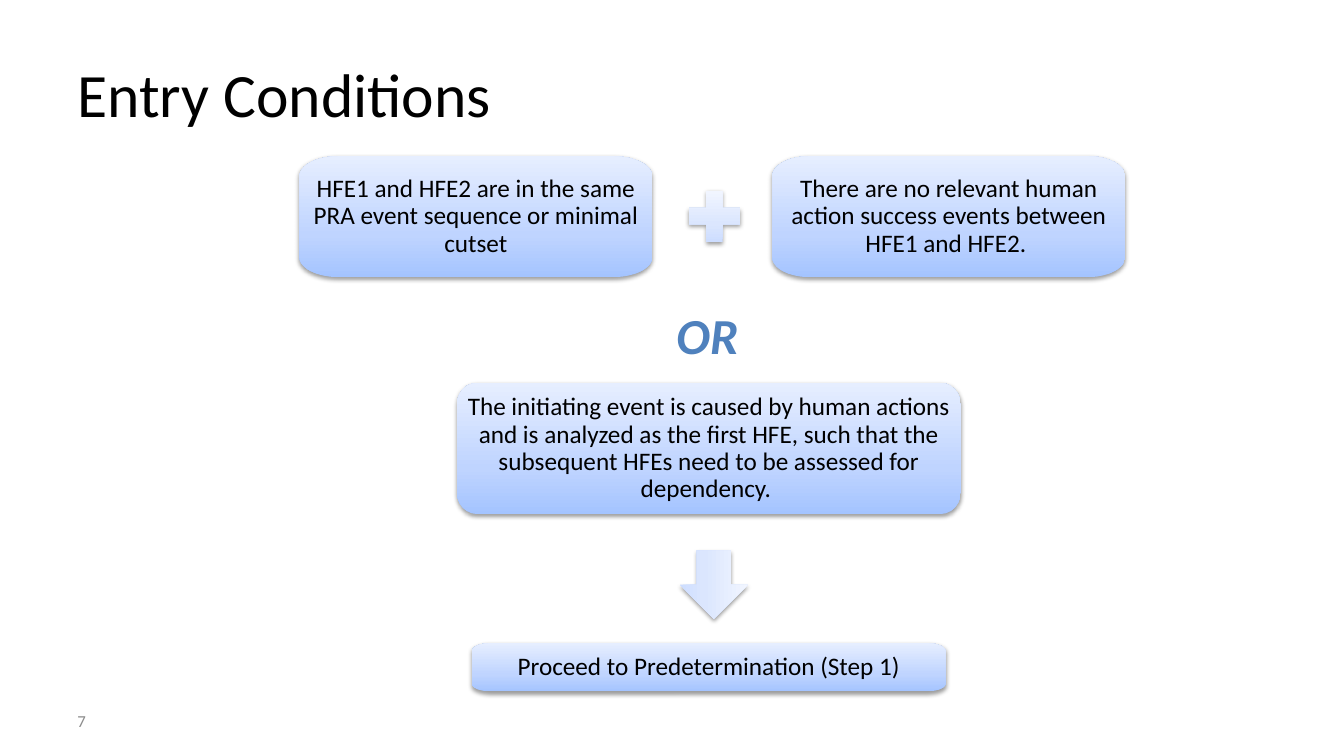
import copy

import pptx
import pptx.dml.color
import pptx.enum.shapes
import pptx.enum.text
import pptx.util
from lxml import etree

Inches, Pt = pptx.util.Inches, pptx.util.Pt
RGBColor = pptx.dml.color.RGBColor
MSO_SHAPE = pptx.enum.shapes.MSO_SHAPE
PP_ALIGN, MSO_ANCHOR = pptx.enum.text.PP_ALIGN, pptx.enum.text.MSO_ANCHOR
qn = pptx.oxml.ns.qn

# Content: text, (left, top, width, height), corner radii (x, y), inset
CONDITIONS = [
    ("HFE1 and HFE2 are in the same PRA event sequence or minimal cutset",
     (2.97, 1.55, 3.5, 1.2), (0.39, 0.2), 0.1),
    ("There are no relevant human action success events between HFE1 and HFE2. ",
     (7.66, 1.55, 3.5, 1.2), (0.37, 0.2), 0.12),
    ("The initiating event is caused by human actions and is analyzed as the "
     "first HFE, such that the subsequent HFEs need to be assessed for dependency. ",
     (4.53, 3.8, 5, 1.3), (0.2, 0.22), 0.08),
    ("Proceed to Predetermination (Step 1)",
     (4.68, 6.38, 4.7, 0.48), (0.19, 0.08), 0.08),
]

# Symbols: preset, (left, top, width, height), adjustments, gradient angle
SYMBOLS = [
    (MSO_SHAPE.CROSS, (6.83, 1.89, 0.51, 0.51), [0.34], 90),
    (MSO_SHAPE.DOWN_ARROW, (6.74, 5.46, 0.68, 0.68), [0.5, 0.5], 0),
]

# Colours and font
FONT = "Calibri"
BLACK = RGBColor(0x00, 0x00, 0x00)
BLUE = RGBColor(0x4F, 0x81, 0xBD)
GREY = RGBColor(0x8C, 0x8C, 0x8C)
BOX_BLUES = [RGBColor(0xA4, 0xC4, 0xFF), RGBColor(0xBF, 0xD4, 0xFF), RGBColor(0xE6, 0xEE, 0xFF)]
SYMBOL_BLUES = [RGBColor(0xCD, 0xDD, 0xFF), RGBColor(0xDB, 0xE6, 0xFE), RGBColor(0xF1, 0xF5, 0xFF)]
STOPS = [0, 0.35, 1]

SHADOW = """<a:outerShdw xmlns:a="http://schemas.openxmlformats.org/drawingml/2006/main"
 blurRad="40000" dist="20000" dir="5400000" rotWithShape="0">
 <a:srgbClr val="000000"><a:alpha val="38000"/></a:srgbClr></a:outerShdw>"""


def write(sp, text, size, color, wrap=True, anchor=MSO_ANCHOR.MIDDLE):
    tf = sp.text_frame
    tf.word_wrap = wrap
    tf.vertical_anchor = anchor
    p = tf.paragraphs[0]
    p.text = text
    p.font.name, p.font.size, p.font.color.rgb = FONT, Pt(size), color
    return p


def add_text(s, box, *args, **kwargs):
    sp = s.shapes.add_textbox(*map(Inches, box))
    return write(sp, *args, **kwargs)


def style(sp, colors, angle):
    """Three-stop gradient, no outline, soft shadow below."""
    sp.fill.gradient()
    sp.fill.gradient_angle = angle
    stop_list = sp._element.spPr.find(".//" + qn("a:gsLst"))
    stop_list.insert(1, copy.deepcopy(stop_list[0]))
    for stop, position, color in zip(sp.fill.gradient_stops, STOPS, colors):
        stop.position, stop.color.rgb = position, color
    sp.line.fill.background()
    sp.shadow.inherit = False
    effects = sp._element.spPr.find(qn("a:effectLst"))
    effects.append(etree.fromstring(SHADOW))


def add_rounded_box(s, box, radii):
    """Rectangle with elliptical corners, drawn clockwise from the left side."""
    left, top, width, height = map(Inches, box)
    rx, ry = map(Inches, radii)
    right, bottom = left + width, top + height
    builder = s.shapes.build_freeform(left, top + ry)
    builder.add_line_segments([
        (left + rx, top), (right - rx, top), (right, top + ry), (right, bottom - ry),
        (right - rx, bottom), (left + rx, bottom), (left, bottom - ry)])
    sp = builder.convert_to_shape()
    # Every other segment is a corner: turn it into a quarter ellipse
    corners = sp._element.spPr.findall(".//" + qn("a:lnTo"))[::2]
    for corner, start in zip(corners, (180, 270, 0, 90)):
        arc = etree.Element(qn("a:arcTo"), wR=str(rx), hR=str(ry),
                            stAng=str(start * 60000), swAng=str(90 * 60000))
        corner.getparent().replace(corner, arc)
    return sp


prs = pptx.Presentation()
prs.slide_width, prs.slide_height = Inches(13.33), Inches(7.5)
s = prs.slides.add_slide(prs.slide_layouts[6])

# Title and the word between the alternatives
add_text(s, (0.67, 0.3, 12, 1.25), "Entry Conditions", 44, BLACK)
p = add_text(s, (6.61, 2.97, 0.83, 0.71), "OR", 36, BLUE, wrap=False, anchor=MSO_ANCHOR.TOP)
p.font.bold = p.font.italic = True

# Condition boxes
for text, box, radii, inset in CONDITIONS:
    sp = add_rounded_box(s, box, radii)
    style(sp, BOX_BLUES, 90)
    p = write(sp, text, 18, BLACK)
    p.alignment, p.line_spacing = PP_ALIGN.CENTER, 0.9
    tf = sp.text_frame
    tf.margin_left = tf.margin_right = tf.margin_top = tf.margin_bottom = Inches(inset)

# Plus sign and arrow
for preset, box, adjustments, angle in SYMBOLS:
    sp = s.shapes.add_shape(preset, *map(Inches, box))
    for i, value in enumerate(adjustments):
        sp.adjustments[i] = value
    style(sp, SYMBOL_BLUES, angle)

# Slide number
add_text(s, (0.67, 6.95, 3.11, 0.4), "7", 12, GREY)

prs.save("out.pptx")
